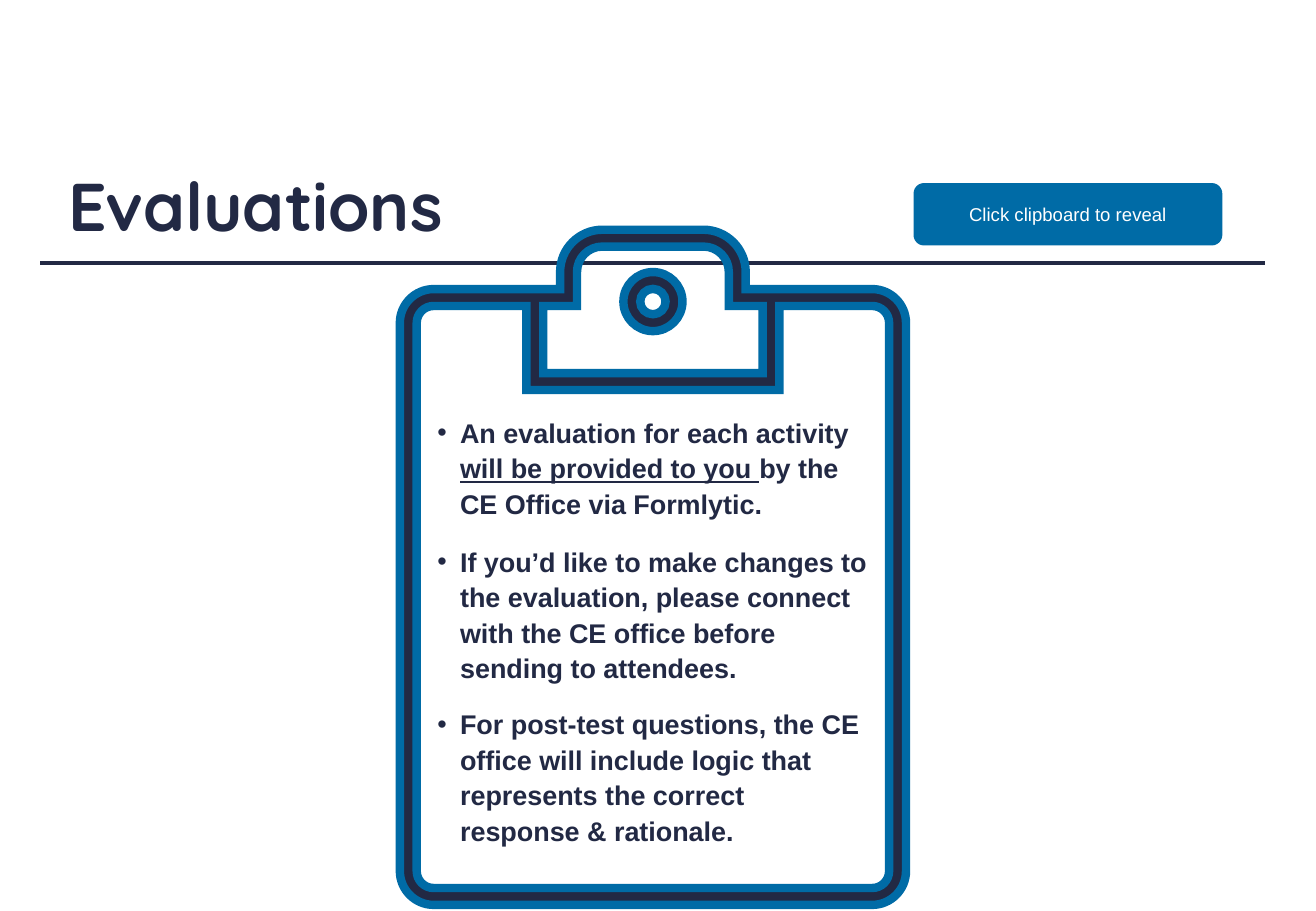
from dataclasses import dataclass
from lxml import etree
from pptx import Presentation
from pptx import util as u
from pptx.dml.color import RGBColor
from pptx.enum import shapes, text
from pptx.oxml import ns

HUES = {"navy": "222944", "blue": "006BA6", "white": "FFFFFF"}
BEND = 0.55


@dataclass
class Spot:
    x: float
    y: float
    r: float = 0


@dataclass
class Node:
    x: float
    y: float
    tip: Spot | None = None


@dataclass
class Item:
    runs: list[tuple[str, bool]]
    gap: float = 0


ITEMS = [
    Item([
        ("An evaluation for each activity ", False),
        ("will be provided to you ", True),
        ("by the CE Office via Formlytic.", False),
    ]),
    Item([("If you’d like to make changes to the evaluation, please connect "
           "with the CE office before sending to attendees.", False)], 13.2),
    Item([("For post-test questions, the CE office will include logic that "
           "represents the correct response & rationale.", False)], 11.9),
]

BOARD = [
    Spot(237, 171.4, 20), Spot(332, 171.4), Spot(332, 136.2, 25), Spot(442, 136.2, 25),
    Spot(442, 171.4), Spot(537, 171.4, 20), Spot(537, 536.4, 20), Spot(237, 536.4, 20),
]
CLIP = [
    Spot(322, 181.4), Spot(342, 181.4), Spot(342, 146.2, 15), Spot(432, 146.2, 15),
    Spot(432, 181.4), Spot(452, 181.4), Spot(452, 221.2), Spot(322, 221.2),
]
PAGE = [
    Spot(247, 181.4, 10), Spot(312, 181.4), Spot(312, 231.2), Spot(462, 231.2),
    Spot(462, 181.4), Spot(527, 181.4, 10), Spot(527, 526.4, 10), Spot(247, 526.4, 10),
]


def hue(name: str) -> RGBColor:
    return RGBColor.from_string(HUES[name])


def put(parent, tag: str, **attrs: str) -> None:
    etree.SubElement(parent, ns.qn(tag), attrs)


def write(para, runs, *, size: float, color: str, face: str = "Arial",
          bold: bool = False, align=text.PP_ALIGN.LEFT, lead: float = 1,
          gap: float = 0, dent: float = 0) -> None:
    para.alignment = align
    para.line_spacing = lead
    para.space_before = u.Pt(gap)
    para.space_after = u.Pt(0)
    if dent:
        props = para._p.get_or_add_pPr()
        props.set("marL", str(u.Pt(dent)))
        props.set("indent", str(-u.Pt(dent)))
        put(props, "a:buFont", typeface="Arial")
        put(props, "a:buChar", char="•")
    for words, under in runs:
        run = para.add_run()
        run.text = words
        font = run.font
        font.name, font.size, font.bold = face, u.Pt(size), bold
        font.color.rgb = hue(color)
        if under:
            font.underline = True


def place(shape, left: float, top: float, wide: float, high: float):
    shape.left, shape.top = u.Pt(left), u.Pt(top)
    shape.width, shape.height = u.Pt(wide), u.Pt(high)
    frame = shape.text_frame
    frame.word_wrap = True
    frame.auto_size = text.MSO_AUTO_SIZE.NONE
    frame.vertical_anchor = text.MSO_ANCHOR.TOP
    return frame


def near(a: Spot, b: Spot) -> Node:
    part = a.r / (abs(b.x - a.x) + abs(b.y - a.y))
    return Node(a.x + (b.x - a.x) * part, a.y + (b.y - a.y) * part)


def trace(spots: list[Spot]) -> list[Node]:
    out: list[Node] = []
    for i, spot in enumerate(spots):
        start = near(spot, spots[i - 1])
        if not out or (out[-1].x, out[-1].y) != (start.x, start.y):
            out.append(start)
        if spot.r:
            end = near(spot, spots[(i + 1) % len(spots)])
            end.tip = spot
            out.append(end)
    return out


def disc(x: float, y: float, r: float) -> list[Spot]:
    return [Spot(x - r, y - r, r), Spot(x + r, y - r, r),
            Spot(x + r, y + r, r), Spot(x - r, y + r, r)]


def bend(form, nodes: list[Node]) -> None:
    marks = list(form._element.iter(ns.qn("a:pt")))
    for last, node, mark in zip(nodes, nodes[1:], marks[1:]):
        if not node.tip:
            continue
        step = mark.getparent()
        step.tag = ns.qn("a:cubicBezTo")
        for i, end in enumerate((last, node)):
            x = end.x + (node.tip.x - end.x) * BEND
            y = end.y + (node.tip.y - end.y) * BEND
            grip = etree.Element(ns.qn("a:pt"), x=str(u.Pt(x) - form.left),
                                 y=str(u.Pt(y) - form.top))
            step.insert(i, grip)


def carve(slide, *loops: list[Spot]) -> None:
    paths = [trace(loop) for loop in loops]
    pen = None
    for path in paths:
        first, *rest = [(u.Pt(n.x), u.Pt(n.y)) for n in path]
        if pen:
            pen.move_to(*first)
        else:
            pen = slide.shapes.build_freeform(*first)
        pen.add_line_segments(rest)
    form = pen.convert_to_shape()
    bend(form, sum(paths, []))
    form.shadow.inherit = False
    form.fill.solid()
    form.fill.fore_color.rgb = hue("navy")
    form.line.color.rgb = hue("blue")
    form.line.width = u.Pt(5)
    put(form.line._get_or_add_ln(), "a:miter", lim="800000")


def main() -> None:
    deck = Presentation()
    deck.slide_width, deck.slide_height = u.Pt(780), u.Pt(540)
    slide = deck.slides.add_slide(deck.slide_layouts[1])

    rule = slide.shapes.add_connector(
        shapes.MSO_CONNECTOR.STRAIGHT, u.Pt(24), u.Pt(156), u.Pt(750), u.Pt(156))
    rule.line.color.rgb = hue("navy")
    rule.line.width = u.Pt(2.25)
    put(rule._element.spPr, "a:effectLst")

    title = place(slide.shapes.title, 39, 96.5, 702, 61)
    title.margin_left = title.margin_right = u.Pt(1.5)
    title.margin_top = title.margin_bottom = u.Pt(0.75)
    write(title.paragraphs[0], [("Evaluations", False)], size=40,
          color="navy", face="Quicksand", bold=True)

    body = place(slide.placeholders[1], 252, 241.2, 270, 265.7)
    for i, item in enumerate(ITEMS):
        para = body.add_paragraph() if i else body.paragraphs[0]
        write(para, item.runs, size=16, color="navy", bold=True,
              lead=1.1, gap=item.gap, dent=13.5)

    carve(slide, disc(387, 178.75, 17.5), disc(387, 178.75, 7.5))
    carve(slide, BOARD, CLIP, PAGE)

    hint = slide.shapes.add_shape(
        shapes.MSO_SHAPE.ROUNDED_RECTANGLE, 0, 0, u.Pt(1), u.Pt(1))
    hint.shadow.inherit = False
    hint.fill.solid()
    hint.fill.fore_color.rgb = hue("blue")
    hint.line.fill.background()
    label = place(hint, 541.5, 108.5, 183, 37)
    label.vertical_anchor = text.MSO_ANCHOR.MIDDLE
    write(label.paragraphs[0], [("Click clipboard to reveal", False)], size=11,
          color="white", align=text.PP_ALIGN.CENTER)

    deck.save("out.pptx")


if __name__ == "__main__":
    main()
